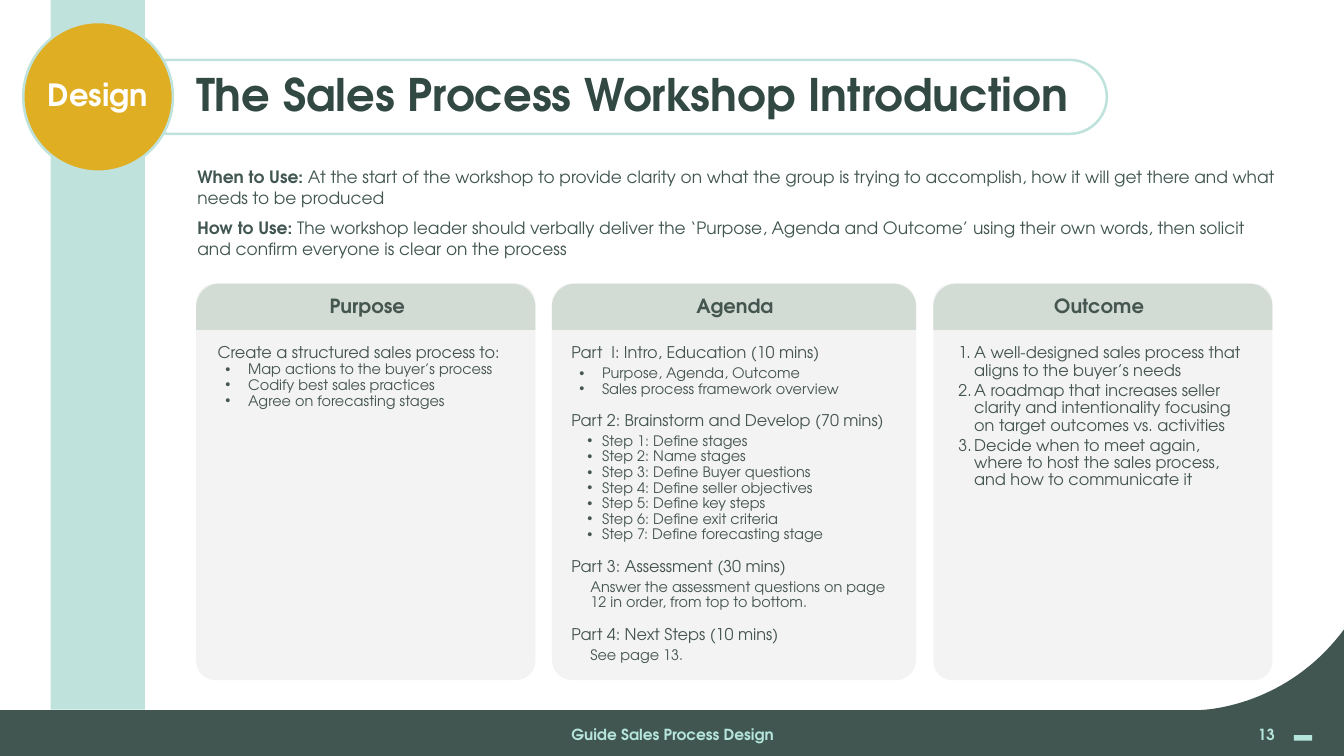
from lxml import etree
from pptx import Presentation
from pptx.dml.color import RGBColor
from pptx.enum import shapes, text
from pptx.oxml.ns import qn
from pptx.util import Inches, Pt

FONT = "TeX Gyre Adventor"
WHITE = RGBColor(0xFF, 0xFF, 0xFF)
GOLD = RGBColor(0xDF, 0xAE, 0x23)
MINT = RGBColor(0xBF, 0xE3, 0xDC)
FOOTER_MINT = RGBColor(0xB5, 0xE5, 0xDC)
FOOTER_GREEN = RGBColor(0x41, 0x56, 0x51)
TITLE_GREEN = RGBColor(0x32, 0x49, 0x43)
CARD_TEXT = RGBColor(0x45, 0x55, 0x50)
CARD_GREY = RGBColor(0xF3, 0xF3, 0xF3)
CARD_HEAD = RGBColor(0xD2, 0xDC, 0xD5)

SHAPE = shapes.MSO_SHAPE
ALIGN = text.PP_ALIGN
ANCHOR = text.MSO_ANCHOR

# Row styles: size, left margin, first-line indent, bullet
LEAD = (19, 0, 0, None)
WIDE_BULLET = (17, 0.5, -0.37, "•")
STEP = (17, 0.5, -0.24, "•")
NOTE = (17, 0.31, 0, None)
NUMBERED = (19, 0.38, -0.26, "arabicPeriod")

HEAD_GAP, DETAIL_GAP, PART_GAP = 32.4, 4.3, 18.4

PURPOSE = [
    (LEAD, HEAD_GAP, "Create a structured sales process to:"),
    (WIDE_BULLET, 0, "Map actions to the buyer’s process"),
    (WIDE_BULLET, 0, "Codify best sales practices"),
    (WIDE_BULLET, 0, "Agree on forecasting stages"),
]
STEPS = ["Define stages", "Name stages", "Define Buyer questions", "Define seller objectives",
         "Define key steps", "Define exit criteria", "Define forecasting stage"]
AGENDA = [
    (LEAD, HEAD_GAP, "Part  I: Intro, Education (10 mins)"),
    (WIDE_BULLET, DETAIL_GAP, "Purpose, Agenda, Outcome"),
    (WIDE_BULLET, 0, "Sales process framework overview"),
    (LEAD, PART_GAP, "Part 2: Brainstorm and Develop (70 mins)"),
    *[(STEP, 0 if number > 1 else DETAIL_GAP, f"Step {number}: {step}")
      for number, step in enumerate(STEPS, 1)],
    (LEAD, PART_GAP, "Part 3: Assessment (30 mins)"),
    (NOTE, DETAIL_GAP, "Answer the assessment questions on page 12 in order, from top to bottom."),
    (LEAD, PART_GAP, "Part 4: Next Steps (10 mins)"),
    (NOTE, DETAIL_GAP, "See page 13."),
]
OUTCOME = [
    (NUMBERED, HEAD_GAP, "A well-designed sales process that aligns to the buyer’s needs"),
    (NUMBERED, 3, "A roadmap that increases seller clarity and intentionality focusing "
                  "on target outcomes vs. activities"),
    (NUMBERED, 3, "Decide when to meet again, where to host the sales process, "
                  "and how to communicate it"),
]
# Card left and width, text left and width, heading, rows
CARDS = [
    (3.21, 5.55, 3.56, 4.9, "Purpose", PURPOSE),
    (9.03, 5.96, 9.35, 5.35, "Agenda", AGENDA),
    (15.27, 5.55, 15.56, 4.85, "Outcome", OUTCOME),
]
OVERVIEW = [
    ("When to Use:", " At the start of the workshop to provide clarity on what the group is "
                     "trying to accomplish, how it will get there and what needs to be produced"),
    ("How to Use:", " The workshop leader should verbally deliver the ‘Purpose, Agenda and "
                    "Outcome’ using their own words, then solicit and confirm everyone is "
                    "clear on the process"),
]


def paint(shape, fill=None, line=None):
    shape.shadow.inherit = False
    if fill is None:
        shape.fill.background()
    else:
        shape.fill.solid()
        shape.fill.fore_color.rgb = fill
    if line is None:
        shape.line.fill.background()
    else:
        shape.line.color.rgb = line
        shape.line.width = Pt(3)


def add_block(page, kind, box, fill=None, line=None, corners=()):
    block = page.shapes.add_shape(kind, *map(Inches, box))
    paint(block, fill, line)
    for index, corner in enumerate(corners):
        block.adjustments[index] = corner
    return block


def set_frame(shape, inset_x=0.1, inset_y=0.05, anchor=ANCHOR.TOP):
    frame = shape.text_frame
    frame.word_wrap = True
    frame.vertical_anchor = anchor
    frame.margin_left = frame.margin_right = Inches(inset_x)
    frame.margin_top = frame.margin_bottom = Inches(inset_y)
    return frame


def add_span(para, words, size, color, bold=True):
    span = para.add_run()
    span.text = words
    span.font.name = FONT
    span.font.size = Pt(size)
    span.font.bold = bold
    span.font.color.rgb = color


def add_label(page, box, words, size, color, align, anchor, spacing=1.0):
    """Add a text box holding one bold line."""
    frame = set_frame(page.shapes.add_textbox(*map(Inches, box)), anchor=anchor)
    para = frame.paragraphs[0]
    para.alignment = align
    para.line_spacing = spacing
    add_span(para, words, size, color)


def set_bullet(para, margin, indent, bullet):
    properties = para._p.get_or_add_pPr()
    properties.set("marL", str(Inches(margin)))
    properties.set("indent", str(Inches(indent)))
    if bullet == "•":
        etree.SubElement(properties, qn("a:buFont"), typeface="Arial")
        etree.SubElement(properties, qn("a:buChar"), char=bullet)
    elif bullet:
        etree.SubElement(properties, qn("a:buAutoNum"), type=bullet)


def add_footer(page, top, width, height):
    """Add the dark band with its curved right end, the deck name and the page number."""
    edge, rise = top + 1.33, top + 0.01
    curve = [(19.59, edge), (19.59, edge), (21, edge + 0.01), (width, rise)]
    points = []
    for step in range(41):
        t = step / 40
        weights = ((1 - t) ** 3, 3 * t * (1 - t) ** 2, 3 * t * t * (1 - t), t ** 3)
        points.append(tuple(Inches(sum(w * point[axis] for w, point in zip(weights, curve)))
                            for axis in (0, 1)))
    bottom = Inches(top + height)
    builder = page.shapes.build_freeform(0, bottom)
    builder.add_line_segments([(0, Inches(edge)), *points, (Inches(width), bottom)])
    paint(builder.convert_to_shape(), FOOTER_GREEN)
    add_block(page, SHAPE.RECTANGLE, (21.17, top + 1.74, 0.3, 0.09), FOOTER_MINT)
    add_label(page, (7.31, top + 1.55, 7.39, 0.35), "Guide Sales Process Design", 18,
              FOOTER_MINT, ALIGN.CENTER, ANCHOR.MIDDLE)
    add_label(page, (20.41, top + 1.55, 0.55, 0.34), "13", 18,
              FOOTER_MINT, ALIGN.RIGHT, ANCHOR.MIDDLE)


def add_card(page, left, top, width, height, text_left, text_width, heading, rows):
    add_block(page, SHAPE.ROUNDED_RECTANGLE, (left, top, width, height), CARD_GREY,
              corners=[0.056])
    add_block(page, SHAPE.ROUND_2_SAME_RECTANGLE, (left, top, width, 0.76), CARD_HEAD,
              corners=[0.5, 0])
    box = (text_left, top + 0.21, text_width, height - 0.5)
    frame = set_frame(page.shapes.add_textbox(*map(Inches, box)), 0, 0)
    title = frame.paragraphs[0]
    title.alignment = ALIGN.CENTER
    title.line_spacing = 0.9
    add_span(title, heading, 23, CARD_TEXT)
    for (size, margin, indent, bullet), gap, words in rows:
        para = frame.add_paragraph()
        set_bullet(para, margin, indent, bullet)
        para.line_spacing = 0.9
        para.space_before = Pt(gap)
        add_span(para, words, size, CARD_TEXT, bold=False)


def add_overview(page, box):
    frame = set_frame(page.shapes.add_textbox(*map(Inches, box)), 0.1, 0.1)
    for index, (term, words) in enumerate(OVERVIEW):
        para = frame.add_paragraph() if index else frame.paragraphs[0]
        if index:
            para.space_before = Pt(12)
        add_span(para, term, 20, FOOTER_GREEN)
        add_span(para, words, 20, FOOTER_GREEN, bold=False)


def add_banner(page, left, top):
    """Add the side stripe, the title pill and the round stage badge."""
    add_block(page, SHAPE.RECTANGLE, (left + 0.45, 0, 1.54, 11.61), MINT)
    add_block(page, SHAPE.ROUNDED_RECTANGLE, (left + 1.78, top + 0.62, 15.95, 1.21),
              line=MINT, corners=[0.5])
    add_label(page, (left + 2.73, top + 0.77, 14.7, 0.9),
              "The Sales Process Workshop Introduction", 52.8, TITLE_GREEN,
              ALIGN.LEFT, ANCHOR.BOTTOM, 0.9)
    badge = add_block(page, SHAPE.OVAL, (left, top, 2.45, 2.45), GOLD, MINT)
    para = set_frame(badge, 0, 0, ANCHOR.MIDDLE).paragraphs[0]
    para.alignment = ALIGN.CENTER
    para.line_spacing = 0.9
    add_span(para, "Design", 36, WHITE)


def main():
    deck = Presentation()
    deck.slide_width, deck.slide_height = Inches(21.99), Inches(12.37)
    page = deck.slides.add_slide(deck.slide_layouts[6])
    add_footer(page, 10.29, 21.99, 2.08)
    for left, width, text_left, text_width, heading, rows in CARDS:
        add_card(page, left, 4.64, width, 6.49, text_left, text_width, heading, rows)
    add_overview(page, (3.13, 2.63, 17.85, 1.72))
    add_banner(page, 0.38, 0.36)
    deck.save("out.pptx")


if __name__ == "__main__":
    main()
